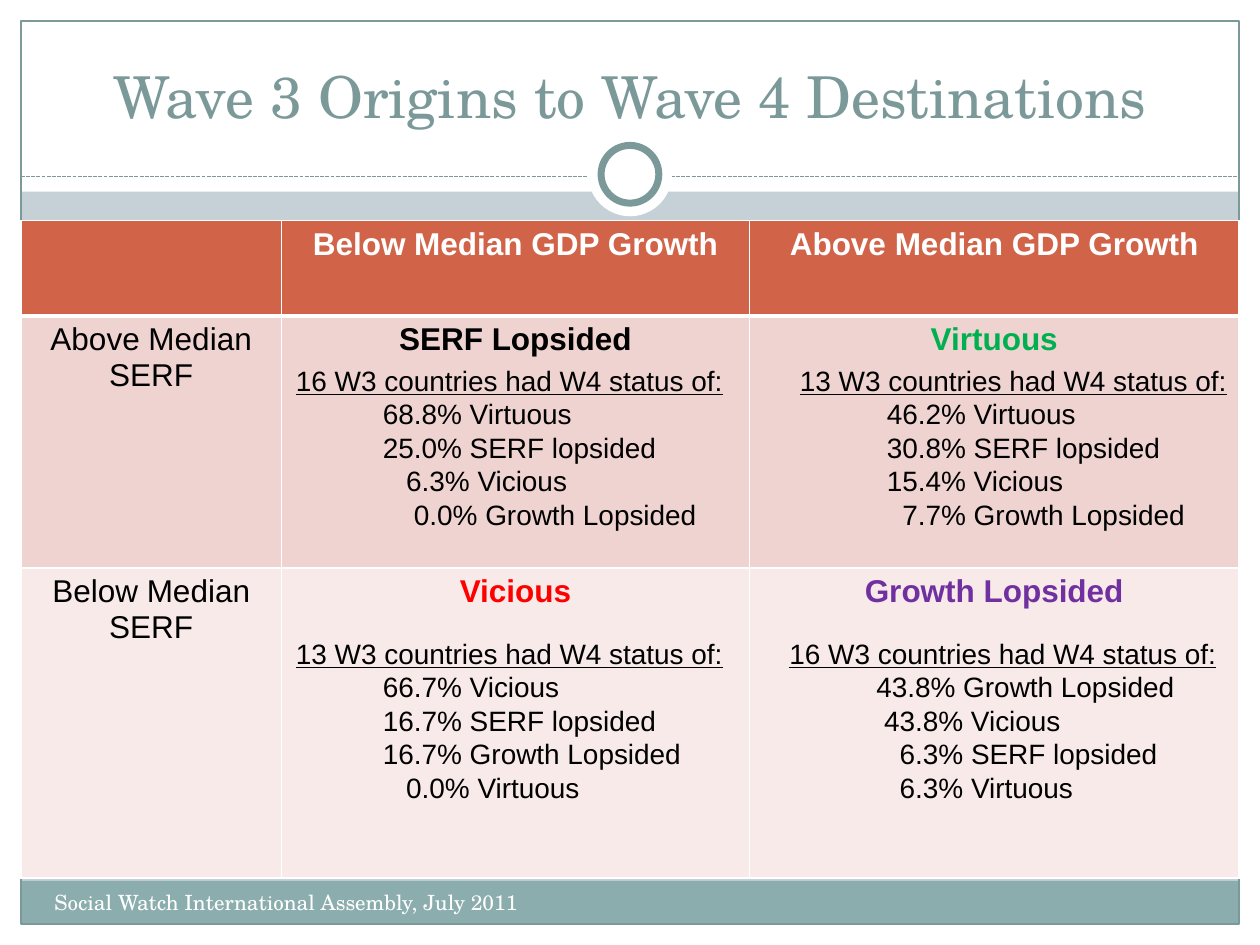
from lxml.etree import SubElement
from pptx import Presentation
from pptx.dml.color import RGBColor
from pptx.enum.dml import MSO_LINE
from pptx.enum.shapes import MSO_CONNECTOR, MSO_SHAPE
from pptx.enum.text import MSO_ANCHOR, MSO_AUTO_SIZE, PP_ALIGN
from pptx.oxml.ns import qn
from pptx.util import Inches, Pt

COLS, ROWS = 120, 90
CELL = Inches(10) / COLS
COLORS = {
    "back": "C5D1D7", "white": "FFFFFF", "black": "000000", "band": "8CADAE",
    "line": "7C999A", "header": "D16349", "above": "EED3D0", "below": "F7EAE9",
    "green": "00B050", "red": "FF0000", "purple": "7030A0",
}
SERIF, SANS = "TeX Gyre Schola", "Arial"
HEAD = dict(size=Pt(18), name=SANS, bold=True)
LABEL = dict(size=Pt(18), name=SANS, bold=False)
BODY = dict(size=Pt(16), name=SANS)
INDENT, SPACE = 8.28, 0.74

TABLE = [
    ("header", [("", "white", HEAD), ("Below Median GDP Growth", "white", HEAD),
                ("Above Median GDP Growth", "white", HEAD)]),
    ("above", [("Above Median SERF", "black", LABEL), ("SERF Lopsided", "black", HEAD),
               ("Virtuous", "green", HEAD)]),
    ("below", [("Below Median SERF", "black", LABEL), ("Vicious", "red", HEAD),
               ("Growth Lopsided", "purple", HEAD)]),
]
OUTCOMES = [
    ((27, 34, 44, 17.4), 16, [(0, "68.8% Virtuous"), (0, "25.0% SERF lopsided"),
                              (3, "6.3% Vicious"), (4, "0.0% Growth Lopsided")]),
    ((27, 60, 44, 17.4), 13, [(0, "66.7% Vicious"), (0, "16.7% SERF lopsided"),
                              (0, "16.7% Growth Lopsided"), (3, "0.0% Virtuous")]),
    ((75, 34, 45, 17.4), 13, [(0, "46.2% Virtuous"), (0, "30.8% SERF lopsided"),
                              (0, "15.4% Vicious"), (2, "7.7% Growth Lopsided")]),
    ((74, 60, 44, 17.4), 16, [(0, "43.8% Growth Lopsided"), (1, "43.8% Vicious"),
                              (3, "6.3% SERF lopsided"), (3, "6.3% Virtuous")]),
]


def grid(*cells):
    """Turn grid counts into lengths."""
    return [round(n * CELL) for n in cells]


def rgb(key):
    """Look up a colour by its role."""
    return RGBColor.from_string(COLORS[key])


def write(p, text, color, fmt, align=PP_ALIGN.LEFT):
    """Put one formatted run in a paragraph."""
    p.alignment = align
    r = p.add_run()
    r.text = text
    for key, value in fmt.items():
        setattr(r.font, key, value)
    r.font.color.rgb = rgb(color)


def add_shape(s, kind, box, fill=None, line=None, width=0.75):
    """Add a flat preset shape with optional fill and outline."""
    sp = s.shapes.add_shape(kind, *grid(*box))
    sp.shadow.inherit = False
    if fill:
        sp.fill.solid()
        sp.fill.fore_color.rgb = rgb(fill)
    else:
        sp.fill.background()
    if line:
        sp.line.color.rgb = rgb(line)
        sp.line.width = Pt(width)
    else:
        sp.line.fill.background()


def add_frame(s, box):
    """Draw the white margins, footer band, border, divider and ring."""
    x, y, w, h = box
    right, bottom = x + w, y + h
    for margin in [(0, bottom, COLS, ROWS - bottom), (0, 0, COLS, 18.25),
                   (0, 0, x, ROWS), (right, 0, COLS - right, ROWS)]:
        add_shape(s, MSO_SHAPE.RECTANGLE, margin, "white")
    add_shape(s, MSO_SHAPE.RECTANGLE, (x, bottom - 4.1, w, 4.1), "band")
    add_shape(s, MSO_SHAPE.RECTANGLE, box, line="line")
    rule = s.shapes.add_connector(MSO_CONNECTOR.STRAIGHT, *grid(x, 16.8, right, 16.8))
    rule.line.color.rgb = rgb("line")
    rule.line.width = Pt(0.75)
    rule.line.dash_style = MSO_LINE.SQUARE_DOT
    SubElement(rule._element.spPr, qn("a:effectLst"))
    for size, line in [(8, None), (5.5, "line")]:
        ring = ((COLS - size) / 2, 16.6 - size / 2, size, size)
        add_shape(s, MSO_SHAPE.OVAL, ring, "white", line, 4)


def add_title(s, box, text):
    """Place and format the title placeholder above the frame."""
    sp = s.shapes.title
    s.shapes._spTree.append(sp._element)
    sp.left, sp.top, sp.width, sp.height = grid(*box)
    tf = sp.text_frame
    tf.word_wrap = True
    tf.vertical_anchor = MSO_ANCHOR.BOTTOM
    write(tf.paragraphs[0], text, "line", dict(size=Pt(33), name=SERIF), PP_ALIGN.CENTER)


def set_borders(cell, top, bottom):
    """Give a table cell white borders."""
    for side, width in dict(L=1, R=1, T=top, B=bottom).items():
        ln = SubElement(cell._tc.get_or_add_tcPr(), qn(f"a:ln{side}"), w=str(Pt(width)))
        fill = SubElement(ln, qn("a:solidFill"))
        SubElement(fill, qn("a:srgbClr"), val=COLORS["white"])


def add_matrix(s, box, widths, heights):
    """Fill the growth by SERF table."""
    table = s.shapes.add_table(len(heights), len(widths), *grid(*box)).table
    for col, width in zip(table.columns, grid(*widths)):
        col.width = width
    for row, height in zip(table.rows, grid(*heights)):
        row.height = height
    for i, (fill, texts) in enumerate(TABLE):
        for j, (text, color, fmt) in enumerate(texts):
            cell = table.cell(i, j)
            set_borders(cell, 3 if i == 1 else 1, 3 if i == 0 else 1)
            cell.fill.solid()
            cell.fill.fore_color.rgb = rgb(fill)
            if text:
                write(cell.text_frame.paragraphs[0], text, color, fmt, PP_ALIGN.CENTER)


def add_outcomes(s, box, count, lines):
    """List the Wave 4 destinations of one group of countries."""
    tf = s.shapes.add_textbox(*grid(*box)).text_frame
    tf.word_wrap = True
    tf.auto_size = MSO_AUTO_SIZE.SHAPE_TO_FIT_TEXT
    write(tf.paragraphs[0], f"{count} W3 countries had W4 status of:", "black",
          dict(BODY, underline=True))
    for step, text in lines:
        p = tf.add_paragraph()
        p._p.get_or_add_pPr().set("marL", str(grid(INDENT + step * SPACE)[0]))
        write(p, text, "black", BODY)


def add_footer(s, box, text):
    """Write the event name on the footer band."""
    tf = s.shapes.add_textbox(*grid(*box)).text_frame
    tf.word_wrap = True
    write(tf.paragraphs[0], text, "white", dict(size=Pt(12), name=SERIF))


def main():
    """Build the slide and save it."""
    prs = Presentation()
    prs.slide_width, prs.slide_height = grid(COLS, ROWS)
    s = prs.slides.add_slide(prs.slide_layouts[5])
    s.background.fill.solid()
    s.background.fill.fore_color.rgb = rgb("back")
    add_frame(s, (2, 2, 116, 86))
    add_title(s, (4, 3, 112, 10), "Wave 3 Origins to Wave 4 Destinations")
    add_matrix(s, (2, 21, 116, 62.6), (24.8, 44.6, 46.6), (9.1, 24, 29.5))
    for outcome in OUTCOMES:
        add_outcomes(s, *outcome)
    add_footer(s, (4, 84.1, 47, 4.8), "Social Watch International Assembly, July 2011")
    prs.save("out.pptx")


if __name__ == "__main__":
    main()
